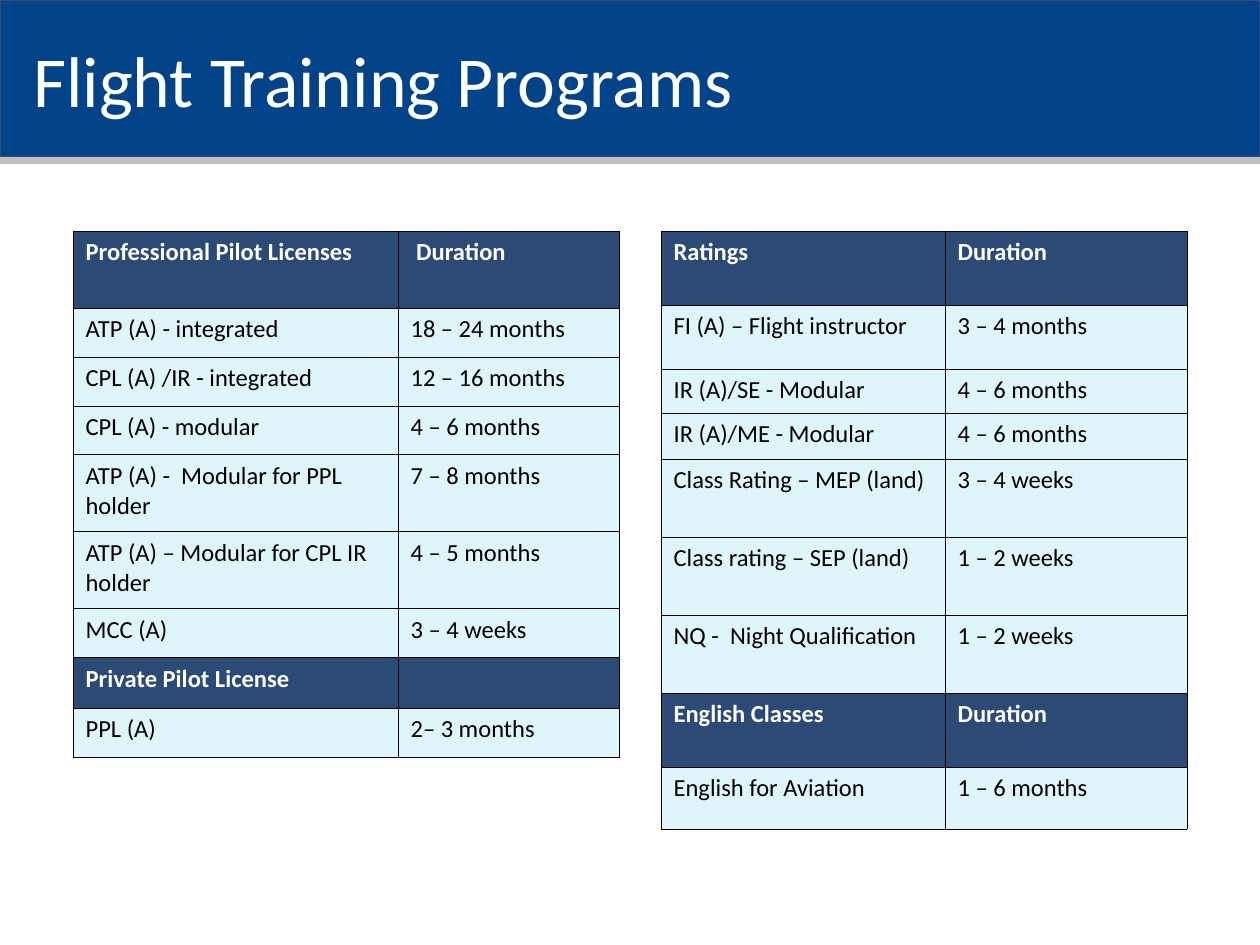
"""Build the flight training programs slide with its duration tables."""
from dataclasses import dataclass

from lxml import etree
from pptx import Presentation
from pptx.dml.color import RGBColor
from pptx.enum.shapes import MSO_SHAPE
from pptx.enum.text import MSO_ANCHOR
from pptx.oxml.ns import qn
from pptx.util import Pt

RECTANGLE = MSO_SHAPE.RECTANGLE
MIDDLE = MSO_ANCHOR.MIDDLE
PX = 914400 / 126


@dataclass(frozen=True)
class Theme:
    font: str = "Calibri"
    banner: str = "004388"
    banner_line: str = "3F4774"
    rule: str = "BFBFBF"
    header: str = "2B4A76"
    body: str = "DEF5FA"
    light: str = "FFFFFF"
    dark: str = "000000"
    title_size: int = 41
    table_size: int = 14
    border: float = 0.5


THEME = Theme()
TITLE = "Flight Training Programs"
LEFT_COLUMNS = (325, 221)
RIGHT_COLUMNS = (284, 242)

LICENSES = [
    (77, True, "Professional Pilot Licenses", " Duration"),
    (49, False, "ATP (A) - integrated", "18 – 24 months"),
    (49, False, "CPL (A) /IR - integrated", "12 – 16 months"),
    (49, False, "CPL (A) - modular", "4 – 6 months"),
    (77, False, "ATP (A) -  Modular for PPL holder", "7 – 8 months"),
    (77, False, "ATP (A) – Modular for CPL IR holder", "4 – 5 months"),
    (49, False, "MCC (A)", "3 – 4 weeks"),
    (49, True, "Private Pilot License", ""),
    (49, False, "PPL (A)", "2– 3 months"),
]
RATINGS = [
    (74, True, "Ratings", "Duration"),
    (64, False, "FI (A) – Flight instructor", "3 – 4 months"),
    (45, False, "IR (A)/SE - Modular", "4 – 6 months"),
]
MORE_RATINGS = [
    (46, False, "IR (A)/ME - Modular", "4 – 6 months"),
    (78, False, "Class Rating – MEP (land)", "3 – 4 weeks"),
    (78, False, "Class rating – SEP (land)", "1 – 2 weeks"),
    (78, False, "NQ -  Night Qualification", "1 – 2 weeks"),
]
ENGLISH = [
    (74, True, "English Classes", "Duration"),
    (62, False, "English for Aviation", "1 – 6 months"),
]
TABLES = [
    (73, 231, LEFT_COLUMNS, LICENSES),
    (661, 231, RIGHT_COLUMNS, RATINGS),
    (661, 413, RIGHT_COLUMNS, MORE_RATINGS),
    (661, 693, RIGHT_COLUMNS, ENGLISH),
]


def emu(*lengths):
    return [round(length * PX) for length in lengths]


def write(frame, text, size, color, bold=False):
    span = frame.paragraphs[0].add_run()
    span.text = text
    formats = {"name": THEME.font, "size": Pt(size), "bold": bold}
    for name, value in formats.items():
        setattr(span.font, name, value)
    span.font.color.rgb = RGBColor.from_string(color)


def add_band(page, top, height, fill, line=None):
    band = page.shapes.add_shape(RECTANGLE, *emu(0, top, 1260, height))
    band.shadow.inherit = False
    band.fill.solid()
    band.fill.fore_color.rgb = RGBColor.from_string(fill)
    if line:
        band.line.color.rgb = RGBColor.from_string(line)
        band.line.width = Pt(1)
    else:
        band.line.fill.background()


def add_title(page):
    box = page.shapes.add_textbox(*emu(21, 21, 1134, 116))
    box.text_frame.word_wrap = True
    box.text_frame.vertical_anchor = MIDDLE
    write(box.text_frame, TITLE, THEME.title_size, THEME.light)


def add_borders(cell):
    properties = cell._tc.get_or_add_tcPr()
    for index, side in enumerate(("lnL", "lnR", "lnT", "lnB")):
        line = etree.Element(qn(f"a:{side}"), w=str(Pt(THEME.border)))
        fill = etree.SubElement(line, qn("a:solidFill"))
        etree.SubElement(fill, qn("a:srgbClr"), val=THEME.dark)
        properties.insert(index, line)


def add_table(page, left, top, columns, rows):
    height = sum(row[0] for row in rows)
    frame = page.shapes.add_table(
        len(rows), len(columns), *emu(left, top, sum(columns), height))
    table = frame.table
    for column, width in zip(table.columns, columns):
        column.width = emu(width)[0]
    for row, (row_height, is_header, *texts) in zip(table.rows, rows):
        row.height = emu(row_height)[0]
        for cell, text in zip(row.cells, texts):
            cell.fill.solid()
            fill = THEME.header if is_header else THEME.body
            cell.fill.fore_color.rgb = RGBColor.from_string(fill)
            add_borders(cell)
            color = THEME.light if is_header else THEME.dark
            write(cell.text_frame, text, THEME.table_size, color, is_header)


def main():
    deck = Presentation()
    deck.slide_width, deck.slide_height = emu(1260, 945)
    page = deck.slides.add_slide(deck.slide_layouts[6])
    add_band(page, 0, 157, THEME.banner, THEME.banner_line)
    add_band(page, 157, 7, THEME.rule)
    add_title(page)
    for table in TABLES:
        add_table(page, *table)
    deck.save("out.pptx")


if __name__ == "__main__":
    main()
